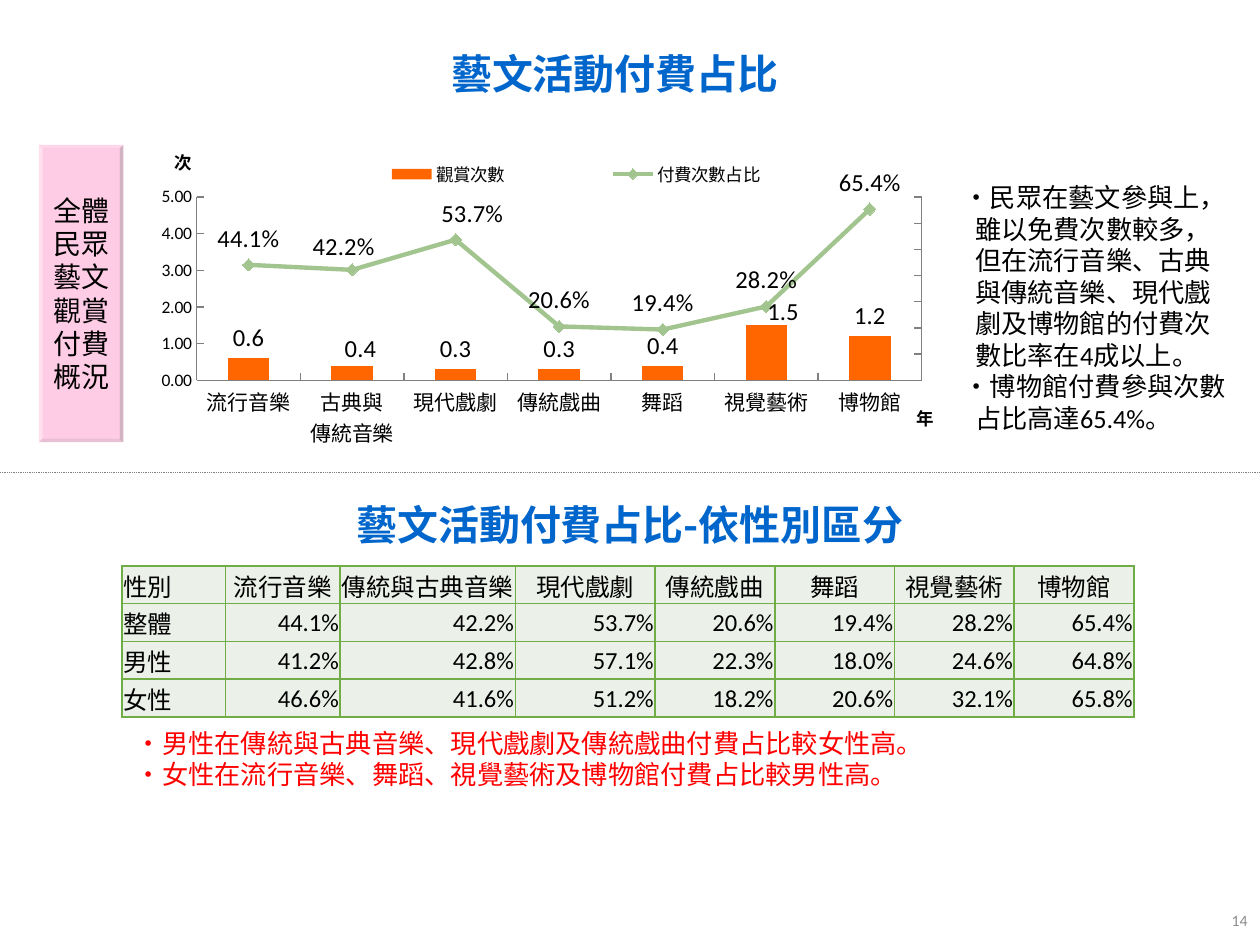
from dataclasses import dataclass

from lxml import etree
from pptx import Presentation
from pptx import util as u
from pptx.chart import data as chart_data
from pptx.dml import color
from pptx.enum import chart as charts, dml, shapes, text
from pptx.oxml import ns, parse_xml


@dataclass(frozen=True)
class Theme:
    title: str = "0066CC"
    ink: str = "000000"
    alert: str = "FF0000"
    muted: str = "8C8C8C"
    rule: str = "808080"
    pink: str = "FF8BC5"
    bar: str = "FF6600"
    trend: str = "A2C48E"
    cell: str = "EBF1E9"
    border: str = "70AD47"
    latin: str = "Calibri"
    cjk: str = "Noto Sans CJK TC"
    heading: str = "Noto Sans CJK SC"
    title_size: float = 23.4
    side_size: int = 16
    body_size: int = 15
    table_size: int = 14
    category_size: int = 12
    axis_size: int = 10
    number_size: int = 9


THEME = Theme()
CATEGORIES = ["流行音樂", "古典與\n傳統音樂", "現代戲劇", "傳統戲曲", "舞蹈", "視覺藝術", "博物館"]
VISITS = [0.6, 0.4, 0.3, 0.3, 0.4, 1.5, 1.2]
PAID_SHARE = [0.441, 0.422, 0.537, 0.206, 0.194, 0.282, 0.654]
VISIT_NUDGES = {1: (0.01, 0.01), 5: (0.02, 0.02)}
SHARE_NUDGES = {1: (-0.01, 0.01), 2: (0.02, 0)}
TABLE_ROWS = [
    ["性別", "流行音樂", "傳統與古典音樂", "現代戲劇", "傳統戲曲", "舞蹈", "視覺藝術", "博物館"],
    ["整體", "44.1%", "42.2%", "53.7%", "20.6%", "19.4%", "28.2%", "65.4%"],
    ["男性", "41.2%", "42.8%", "57.1%", "22.3%", "18.0%", "24.6%", "64.8%"],
    ["女性", "46.6%", "41.6%", "51.2%", "18.2%", "20.6%", "32.1%", "65.8%"],
]
COLUMN_WIDTHS = [0.82, 0.91, 1.39, 1.11, 0.95, 0.95, 0.95, 0.95]
FINDINGS = ["•民眾在藝文參與上，雖以免費次數較多，但在流行音樂、古典與傳統音樂、現代戲劇及博物館的付費次數比率在4成以上。",
            "•博物館付費參與次數占比高達65.4%。"]
GENDER_FINDINGS = ["•男性在傳統與古典音樂、現代戲劇及傳統戲曲付費占比較女性高。",
                   "•女性在流行音樂、舞蹈、視覺藝術及博物館付費占比較男性高。"]


def apply(target, values):
    for name, value in values.items():
        setattr(target, name, value)


def inches(*lengths):
    return [u.Inches(length) for length in lengths]


def set_font(font, size, ink=THEME.ink, face=THEME.latin, bold=False):
    apply(font, {"size": u.Pt(size), "name": face, "bold": bold})
    font.color.rgb = color.RGBColor.from_string(ink)


def paint(fill, ink):
    fill.solid()
    fill.fore_color.rgb = color.RGBColor.from_string(ink)


def write(para, words, size, ink=THEME.ink, face=THEME.latin, east=None,
          bold=False, align=text.PP_ALIGN.LEFT):
    para.alignment = align
    span = para.add_run()
    span.text = words
    set_font(span.font, size, ink, face, bold)
    if east:
        span.font._element.get_or_add_latin().addnext(
            parse_xml(f'<a:ea {ns.nsdecls("a")} typeface="{east}"/>'))


def add_heading(shape, box, words):
    apply(shape, dict(zip(("left", "top", "width", "height"), inches(*box))))
    apply(shape.text_frame, {"word_wrap": True, "vertical_anchor": text.MSO_ANCHOR.MIDDLE})
    write(shape.text_frame.paragraphs[0], words, THEME.title_size, THEME.title,
          THEME.heading, THEME.heading, True, text.PP_ALIGN.CENTER)


def add_findings(page, box, lines, ink):
    frame = page.shapes.add_textbox(*inches(*box)).text_frame
    frame.word_wrap = True
    for index, line in enumerate(lines):
        para = frame.add_paragraph() if index else frame.paragraphs[0]
        para.line_spacing = u.Pt(18)
        properties = para._p.get_or_add_pPr()
        properties.set("marL", str(u.Inches(0.09)))
        properties.set("indent", str(u.Inches(-0.09)))
        write(para, line, THEME.body_size, ink, east=THEME.cjk)


def add_side_label(page, box, words):
    shape = page.shapes.add_shape(shapes.MSO_SHAPE.BEVEL, *inches(*box))
    shape.shadow.inherit = False
    shape.adjustments[0] = 0.04
    paint(shape.fill, THEME.pink)
    etree.SubElement(shape.fill._xPr.find(".//" + ns.qn("a:srgbClr")),
                     ns.qn("a:alpha"), val="44000")
    shape.line.fill.background()
    apply(shape.text_frame, {"word_wrap": True, "vertical_anchor": text.MSO_ANCHOR.MIDDLE,
                             "margin_left": 0, "margin_right": 0})
    para = shape.text_frame.paragraphs[0]
    para.line_spacing = u.Pt(19)
    write(para, words, THEME.side_size, face=THEME.cjk, east=THEME.cjk,
          align=text.PP_ALIGN.CENTER)


def layout_xml(x, y, width=None, height=None, inner=False, edge=True):
    parts = ['<c:layoutTarget val="inner"/>'] if inner else []
    if edge:
        parts += [f'<c:{axis}Mode val="edge"/>' for axis in "xy"]
    sizes = {"x": x, "y": y, "w": width, "h": height}
    parts += [f'<c:{key} val="{value}"/>' for key, value in sizes.items() if value is not None]
    return parse_xml(f'<c:layout {ns.nsdecls("c")}><c:manualLayout>{"".join(parts)}'
                     '</c:manualLayout></c:layout>')


def place(element, before, layout):
    for old in element.findall(ns.qn("c:layout")):
        element.remove(old)
    anchor = element.find(ns.qn(before))
    if anchor is None:
        element.insert(0, layout)
    else:
        anchor.addnext(layout)


def style_axis(axis, size, title, x, y):
    apply(axis, {"has_major_gridlines": False, "major_tick_mark": charts.XL_TICK_MARK.INSIDE,
                 "has_title": True})
    set_font(axis.tick_labels.font, size)
    paint(axis.format.line.fill, THEME.rule)
    frame = axis.axis_title.text_frame
    write(frame.paragraphs[0], title, THEME.axis_size, bold=True)
    body = frame._txBody.find(ns.qn("a:bodyPr"))
    body.set("rot", "0")
    body.set("vert", "horz")
    place(axis.axis_title._element, "c:tx", layout_xml(x, y))


def label_series(series, position, number_format, nudges):
    labels = series.data_labels
    apply(labels, {"show_value": True, "position": position, "number_format": number_format,
                   "number_format_is_linked": False})
    set_font(labels.font, THEME.table_size)
    for index, shift in nudges.items():
        label = series.points[index].data_label
        set_font(label.font, THEME.table_size)
        label.position = position
        place(label._dLbl, "c:idx", layout_xml(*shift, edge=False))


def move_to_right_axis(plot_area, bar_plot):
    series = bar_plot.findall(ns.qn("c:ser"))[1]
    for flag in series.findall(ns.qn("c:invertIfNegative")):
        series.remove(flag)
    line_plot = parse_xml(
        f'<c:lineChart {ns.nsdecls("c")}><c:grouping val="standard"/><c:varyColors val="0"/>'
        '<c:marker val="1"/><c:axId val="5001"/><c:axId val="5002"/></c:lineChart>')
    line_plot.insert(2, series)
    bar_plot.addnext(line_plot)
    scale = '<c:scaling><c:orientation val="minMax"/>{}</c:scaling><c:delete val="{}"/>'
    hidden = parse_xml(
        f'<c:catAx {ns.nsdecls("c")}><c:axId val="5001"/>{scale.format("", 1)}'
        '<c:axPos val="b"/><c:crossAx val="5002"/><c:crosses val="autoZero"/></c:catAx>')
    limits = '<c:max val="0.7"/><c:min val="0"/>'
    right = parse_xml(
        f'<c:valAx {ns.nsdecls("c", "a")}><c:axId val="5002"/>{scale.format(limits, 0)}'
        '<c:axPos val="r"/><c:numFmt formatCode="0%" sourceLinked="0"/>'
        '<c:majorTickMark val="in"/><c:minorTickMark val="none"/><c:tickLblPos val="none"/>'
        f'<c:spPr><a:ln><a:solidFill><a:srgbClr val="{THEME.rule}"/></a:solidFill></a:ln></c:spPr>'
        '<c:crossAx val="5001"/><c:crosses val="max"/><c:majorUnit val="0.1"/></c:valAx>')
    plot_area.find(ns.qn("c:valAx")).addnext(hidden)
    hidden.addnext(right)


def add_combined_chart(page, box):
    values = chart_data.CategoryChartData()
    values.categories = CATEGORIES
    values.add_series("觀賞次數", VISITS, "0.0")
    values.add_series("付費次數占比", PAID_SHARE, "0.0%")
    chart = page.shapes.add_chart(charts.XL_CHART_TYPE.COLUMN_CLUSTERED,
                                  *inches(*box), values).chart
    apply(chart, {"has_title": False, "has_legend": True})
    set_font(chart.font, THEME.axis_size)
    apply(chart.legend, {"position": charts.XL_LEGEND_POSITION.TOP, "include_in_layout": False})
    set_font(chart.legend.font, THEME.axis_size)
    place(chart.legend._element, "c:legendPos", layout_xml(0.2, 0.07, 0.68, 0.1))
    style_axis(chart.category_axis, THEME.category_size, "年", 0.94, 0.81)
    style_axis(chart.value_axis, THEME.axis_size, "次", 0.06, 0.03)
    apply(chart.value_axis, {"minimum_scale": 0, "maximum_scale": 5, "major_unit": 1})
    apply(chart.value_axis.tick_labels, {"number_format": "0.00", "number_format_is_linked": False})
    bars = chart.plots[0]
    apply(bars, {"gap_width": 150, "vary_by_categories": False})
    plot_area = chart._chartSpace.find(".//" + ns.qn("c:plotArea"))
    move_to_right_axis(plot_area, bars._element)
    place(plot_area, "c:layout", layout_xml(0.09, 0.19, 0.86, 0.56, inner=True))
    visits, share = chart.plots[0].series[0], chart.plots[1].series[0]
    paint(visits.format.fill, THEME.bar)
    share.smooth = False
    paint(share.format.line.fill, THEME.trend)
    share.format.line.width = u.Pt(2.5)
    apply(share.marker, {"style": charts.XL_MARKER_STYLE.DIAMOND, "size": 7})
    for fill in (share.marker.format.fill, share.marker.format.line.fill):
        paint(fill, THEME.trend)
    label_series(visits, charts.XL_LABEL_POSITION.OUTSIDE_END, "0.0", VISIT_NUDGES)
    label_series(share, charts.XL_LABEL_POSITION.ABOVE, "0.0%", SHARE_NUDGES)


def add_divider(page, top):
    line = page.shapes.add_connector(shapes.MSO_CONNECTOR.STRAIGHT, *inches(0, top, 10, top))
    apply(line.line, {"width": u.Pt(0.5), "dash_style": dml.MSO_LINE.ROUND_DOT})
    line.line.color.rgb = color.RGBColor.from_string(THEME.rule)
    etree.SubElement(line._element.spPr, ns.qn("a:effectLst"))


def style_cell(cell):
    apply(cell, {"margin_left": u.Inches(0.01), "margin_right": u.Inches(0.01),
                 "margin_top": u.Inches(0.01), "margin_bottom": 0,
                 "vertical_anchor": text.MSO_ANCHOR.MIDDLE})
    paint(cell.fill, THEME.cell)
    properties = cell._tc.get_or_add_tcPr()
    for index, side in enumerate(("lnL", "lnR", "lnT", "lnB")):
        properties.insert(index, parse_xml(
            f'<a:{side} {ns.nsdecls("a")} w="12700"><a:solidFill>'
            f'<a:srgbClr val="{THEME.border}"/></a:solidFill></a:{side}>'))


def add_gender_table(page, box):
    table = page.shapes.add_table(len(TABLE_ROWS), len(COLUMN_WIDTHS), *inches(*box)).table
    for column, width in zip(table.columns, COLUMN_WIDTHS):
        column.width = u.Inches(width)
    for row_index, row in enumerate(TABLE_ROWS):
        for column_index, words in enumerate(row):
            cell = table.cell(row_index, column_index)
            style_cell(cell)
            align = text.PP_ALIGN.RIGHT if row_index else text.PP_ALIGN.CENTER
            face = THEME.latin if column_index else THEME.cjk
            write(cell.text_frame.paragraphs[0], words, THEME.table_size, face=face,
                  east=THEME.cjk, align=align if column_index else text.PP_ALIGN.LEFT)


def add_page_number(page, box, number):
    frame = page.shapes.add_textbox(*inches(*box)).text_frame
    apply(frame, {"word_wrap": True, "vertical_anchor": text.MSO_ANCHOR.MIDDLE})
    write(frame.paragraphs[0], number, THEME.number_size, THEME.muted, align=text.PP_ALIGN.RIGHT)


def main():
    deck = Presentation()
    apply(deck, {"slide_width": u.Inches(10), "slide_height": u.Inches(7.5)})
    page = deck.slides.add_slide(deck.slide_layouts[5])
    add_heading(page.shapes.title, (1.54, 0.33, 6.68, 0.5), "藝文活動付費占比")
    add_combined_chart(page, (0.96, 1.07, 6.69, 2.6))
    add_findings(page, (7.55, 1.39, 2.34, 2.13), FINDINGS, THEME.ink)
    add_divider(page, 3.75)
    add_side_label(page, (0.31, 1.15, 0.67, 2.36), "全體民眾藝文觀賞付費概況")
    add_page_number(page, (7.67, 7.1, 2.33, 0.4), "14")
    add_gender_table(page, (0.97, 4.49, 8.03, 1.2))
    add_heading(page.shapes.add_textbox(0, 0, 0, 0), (1.66, 3.91, 6.68, 0.5),
                "藝文活動付費占比-依性別區分")
    add_findings(page, (0.98, 5.72, 7.74, 0.79), GENDER_FINDINGS, THEME.alert)
    deck.save("out.pptx")


if __name__ == "__main__":
    main()
